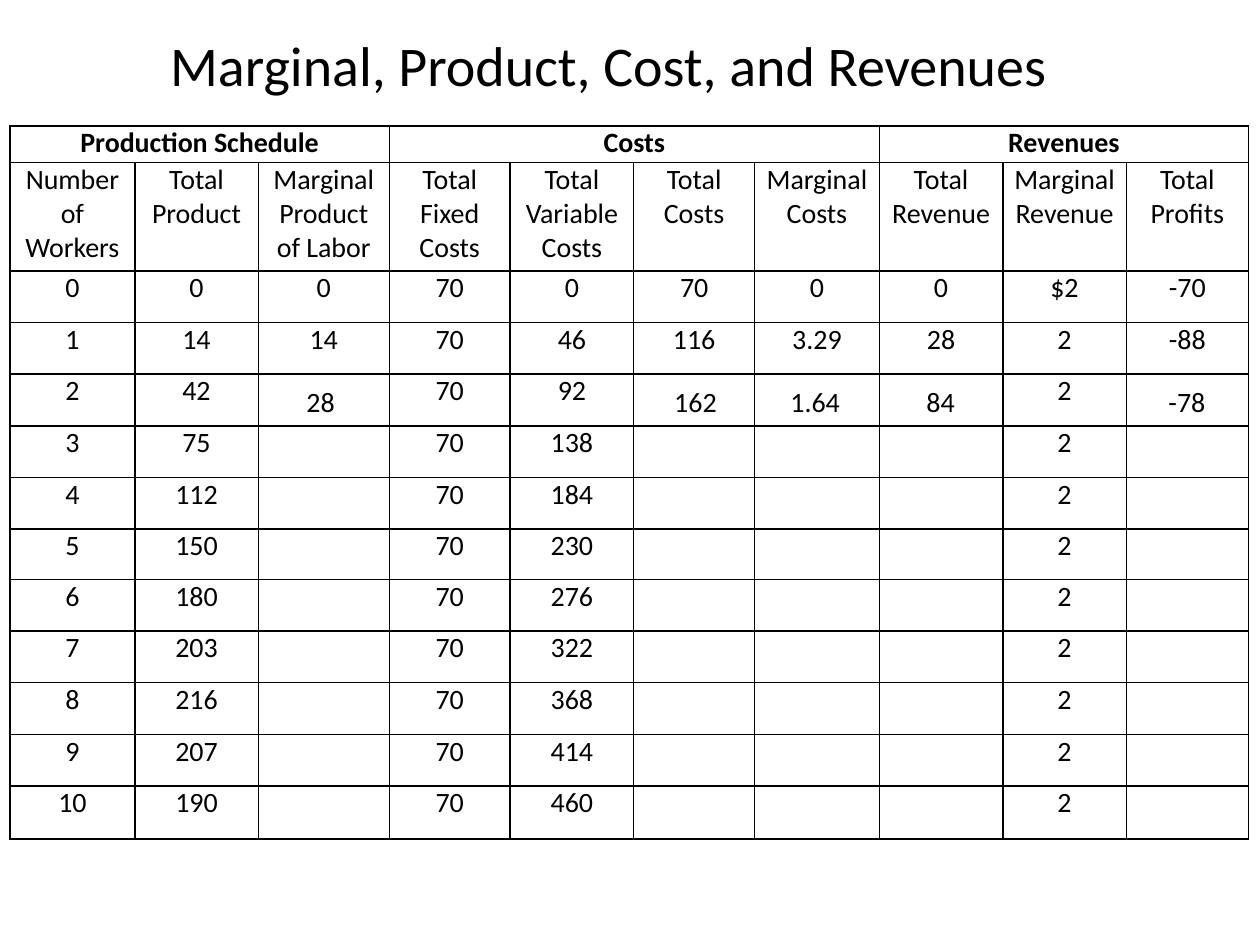
import pptx
import pptx.util
import pptx.dml.color
import pptx.enum.text
import pptx.oxml.ns
from lxml import etree
from pptx.util import Inches

COLORS = {"ink": "000000", "paper": "FFFFFF"}
FONT = "Calibri"
GROUPS = [("Production Schedule", 0, 2), ("Costs", 3, 6), ("Revenues", 7, 9)]
HEADINGS = [
    "Number of Workers", "Total Product", "Marginal Product of Labor",
    "Total Fixed Costs", "Total Variable Costs", "Total Costs",
    "Marginal Costs", "Total Revenue", "Marginal Revenue", "Total Profits",
]
FIRST_ROWS = [
    ["0", "0", "0", "70", "0", "70", "0", "0", "$2", "-70"],
    ["1", "14", "14", "70", "46", "116", "3.29", "28", "2", "-88"],
]
# Total product for 2 to 10 workers; the other columns are left to fill in
PRODUCTS = [42, 75, 112, 150, 180, 203, 216, 207, 190]
COLUMN_WIDTHS = [0.99, 0.98, 1.04, 0.96, 0.98, 0.96, 0.99, 0.98, 0.98, 0.97]
ROW_HEIGHTS = [0.29, 0.86] + [0.41] * 5 + [0.4] + [0.41] * 4 + [0.42]
ANSWERS = [("28", 2.33, 0.43), ("162", 5.25, 0.54), ("1.64", 6.17, 0.6),
           ("84", 7.25, 0.43), ("-78", 9.17, 0.5)]


def format_text(frame, size, align, bold=False):
    for para in frame.paragraphs:
        para.alignment = align
        para.font.size = pptx.util.Pt(size)
        for span in para.runs:
            span.font.size = pptx.util.Pt(size)
            span.font.name = FONT
            span.font.bold = bold
            span.font.color.rgb = pptx.dml.color.RGBColor.from_string(COLORS["ink"])


def add_borders(cell):
    properties = cell._tc.get_or_add_tcPr()
    for side in ("a:lnL", "a:lnR", "a:lnT", "a:lnB"):
        line = etree.SubElement(properties, pptx.oxml.ns.qn(side), w="12700")
        fill = etree.SubElement(line, pptx.oxml.ns.qn("a:solidFill"))
        etree.SubElement(fill, pptx.oxml.ns.qn("a:srgbClr"), val=COLORS["ink"])


CENTER = pptx.enum.text.PP_ALIGN.CENTER
LEFT = pptx.enum.text.PP_ALIGN.LEFT

deck = pptx.Presentation()
deck.slide_width = Inches(10)
deck.slide_height = Inches(7.5)
page = deck.slides.add_slide(deck.slide_layouts[5])

title = page.shapes.title
title.left, title.top = Inches(1.25), Inches(0.19)
title.width, title.height = Inches(7.58), Inches(0.64)
title.text_frame.text = "Marginal, Product, Cost, and Revenues"
title.text_frame.vertical_anchor = pptx.enum.text.MSO_ANCHOR.TOP
format_text(title.text_frame, 32, LEFT)

# Schedule table
group_row = [""] * len(HEADINGS)
for name, first, last in GROUPS:
    group_row[first] = name
rows = [group_row, HEADINGS] + FIRST_ROWS
for workers, product in enumerate(PRODUCTS, start=2):
    rows.append([str(workers), str(product), "", "70", str(46 * workers),
                 "", "", "", "2", ""])

table = page.shapes.add_table(
    len(rows), len(HEADINGS), Inches(0.08), Inches(1),
    Inches(sum(COLUMN_WIDTHS)), Inches(sum(ROW_HEIGHTS))).table
table.first_row = False
table.horz_banding = False
for column, width in zip(table.columns, COLUMN_WIDTHS):
    column.width = Inches(width)
for row, height in zip(table.rows, ROW_HEIGHTS):
    row.height = Inches(height)

for row_index, values in enumerate(rows):
    for column_index, value in enumerate(values):
        cell = table.cell(row_index, column_index)
        cell.text_frame.text = value
        cell.margin_left = cell.margin_right = Inches(0.07)
        cell.margin_top = cell.margin_bottom = 0
        format_text(cell.text_frame, 16, CENTER, bold=row_index == 0)
        add_borders(cell)
        cell.fill.solid()
        cell.fill.fore_color.rgb = pptx.dml.color.RGBColor.from_string(COLORS["paper"])
for name, first, last in GROUPS:
    table.cell(0, first).merge(table.cell(0, last))

# Worked answers for two workers, laid over the table
for answer, left, width in ANSWERS:
    box = page.shapes.add_textbox(Inches(left), Inches(3), Inches(width), Inches(0.37))
    box.text_frame.text = answer
    box.text_frame.word_wrap = False
    format_text(box.text_frame, 16, CENTER)

deck.save("out.pptx")
